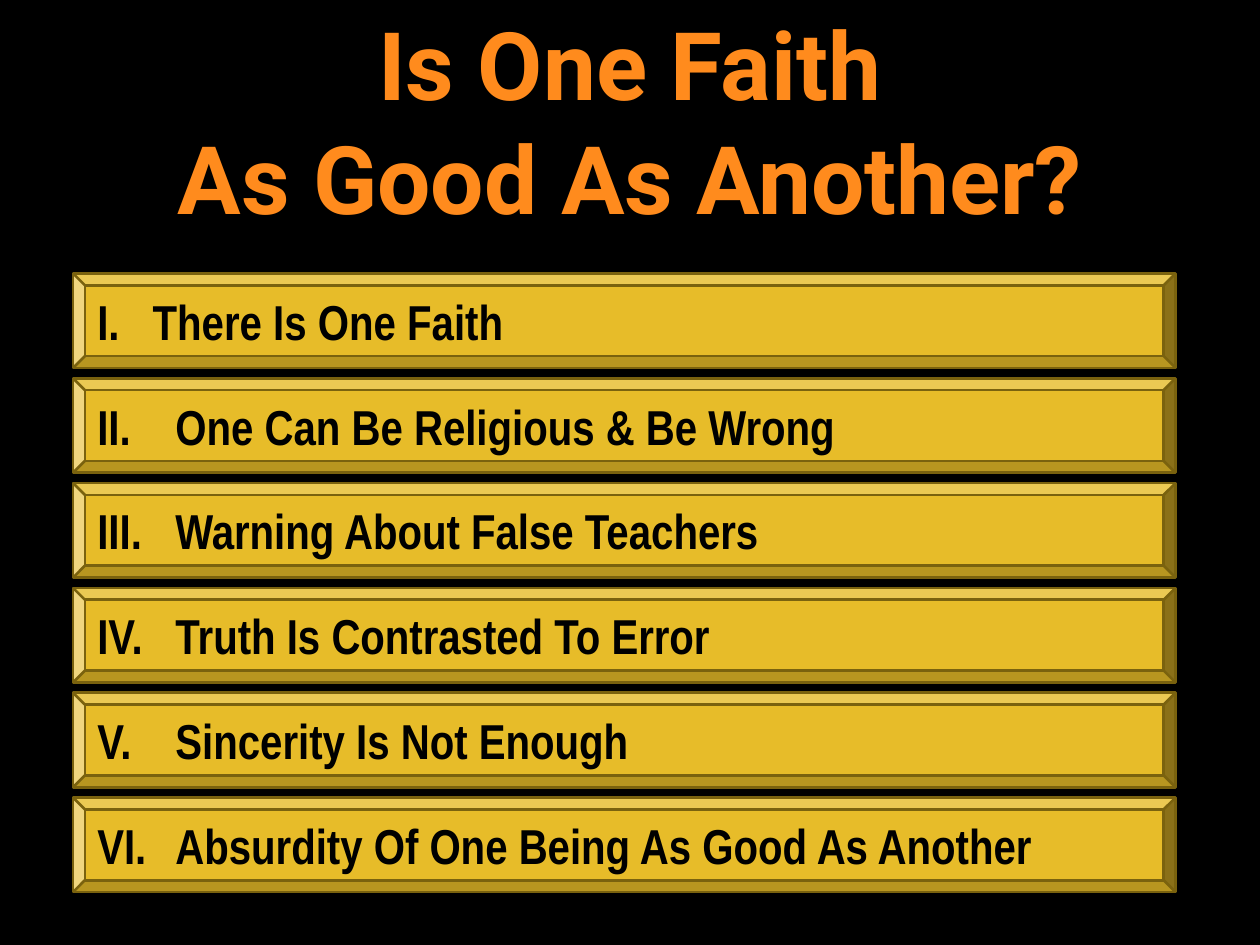
from lxml import etree
from pptx import Presentation
from pptx.dml.color import RGBColor
from pptx.enum.shapes import MSO_SHAPE
from pptx.enum.text import MSO_ANCHOR, MSO_AUTO_SIZE, PP_ALIGN
from pptx.oxml.ns import qn
from pptx.util import Inches, Pt

BEVEL = MSO_SHAPE.BEVEL
TOP, MIDDLE = MSO_ANCHOR.TOP, MSO_ANCHOR.MIDDLE
LEFT, CENTER = PP_ALIGN.LEFT, PP_ALIGN.CENTER
NO_AUTOFIT = MSO_AUTO_SIZE.NONE

TITLE_LINES = ["Is One Faith", "As Good As Another?"]
POINTS = [
    "There Is One Faith",
    "One Can Be Religious & Be Wrong",
    "Warning About False Teachers",
    "Truth Is Contrasted To Error",
    "Sincerity Is Not Enough",
    "Absurdity Of One Being As Good As Another",
]
BAR_LEFT, BAR_WIDTH, BAR_HEIGHT = 0.58, 8.75, 0.75
FIRST_TOP, LAST_TOP = 2.17, 6.33
FIRST_INDENT, OTHER_INDENT = 0.44, 0.62


def color(value):
    return RGBColor.from_string(value)


def add_run(paragraph, text, font_name, size, font_color):
    run = paragraph.add_run()
    run.text = text
    run.font.name = font_name
    run.font.size = Pt(size)
    run.font.bold = True
    run.font.color.rgb = color(font_color)


def number_paragraph(paragraph, number, indent):
    properties = paragraph._p.get_or_add_pPr()
    properties.set("marL", str(Inches(indent)))
    properties.set("indent", str(-Inches(indent)))
    numbering = etree.SubElement(properties, qn("a:buAutoNum"), type="romanUcPeriod")
    if number > 1:
        numbering.set("startAt", str(number))


def fill_title(title):
    title.left, title.top = Inches(0), Inches(0)
    title.width, title.height = Inches(10), Inches(1.92)
    frame = title.text_frame
    frame.word_wrap = True
    frame.auto_size = NO_AUTOFIT
    frame.vertical_anchor = TOP
    for index, line in enumerate(TITLE_LINES):
        paragraph = frame.add_paragraph() if index else frame.paragraphs[0]
        paragraph.alignment = CENTER
        add_run(paragraph, line, "Roboto", 54, "FF8B1D")


def add_bar(slide, number, text, top):
    bar = slide.shapes.add_shape(
        BEVEL, Inches(BAR_LEFT), Inches(top), Inches(BAR_WIDTH), Inches(BAR_HEIGHT)
    )
    bar.shadow.inherit = False
    bar.fill.solid()
    bar.fill.fore_color.rgb = color("E7BC29")
    bar.line.color.rgb = color("7A620E")
    bar.line.width = Pt(1.5)
    frame = bar.text_frame
    frame.word_wrap = True
    frame.vertical_anchor = MIDDLE
    paragraph = frame.paragraphs[0]
    paragraph.alignment = LEFT
    number_paragraph(paragraph, number, FIRST_INDENT if number == 1 else OTHER_INDENT)
    add_run(paragraph, text, "Arial Narrow", 28, "000000")


def main():
    presentation = Presentation()
    presentation.slide_width = Inches(10)
    presentation.slide_height = Inches(7.5)
    slide = presentation.slides.add_slide(presentation.slide_layouts[5])
    slide.background.fill.solid()
    slide.background.fill.fore_color.rgb = color("000000")
    fill_title(slide.shapes.title)
    step = (LAST_TOP - FIRST_TOP) / (len(POINTS) - 1)
    for index, text in enumerate(POINTS):
        add_bar(slide, index + 1, text, FIRST_TOP + index * step)
    presentation.save("out.pptx")


if __name__ == "__main__":
    main()
